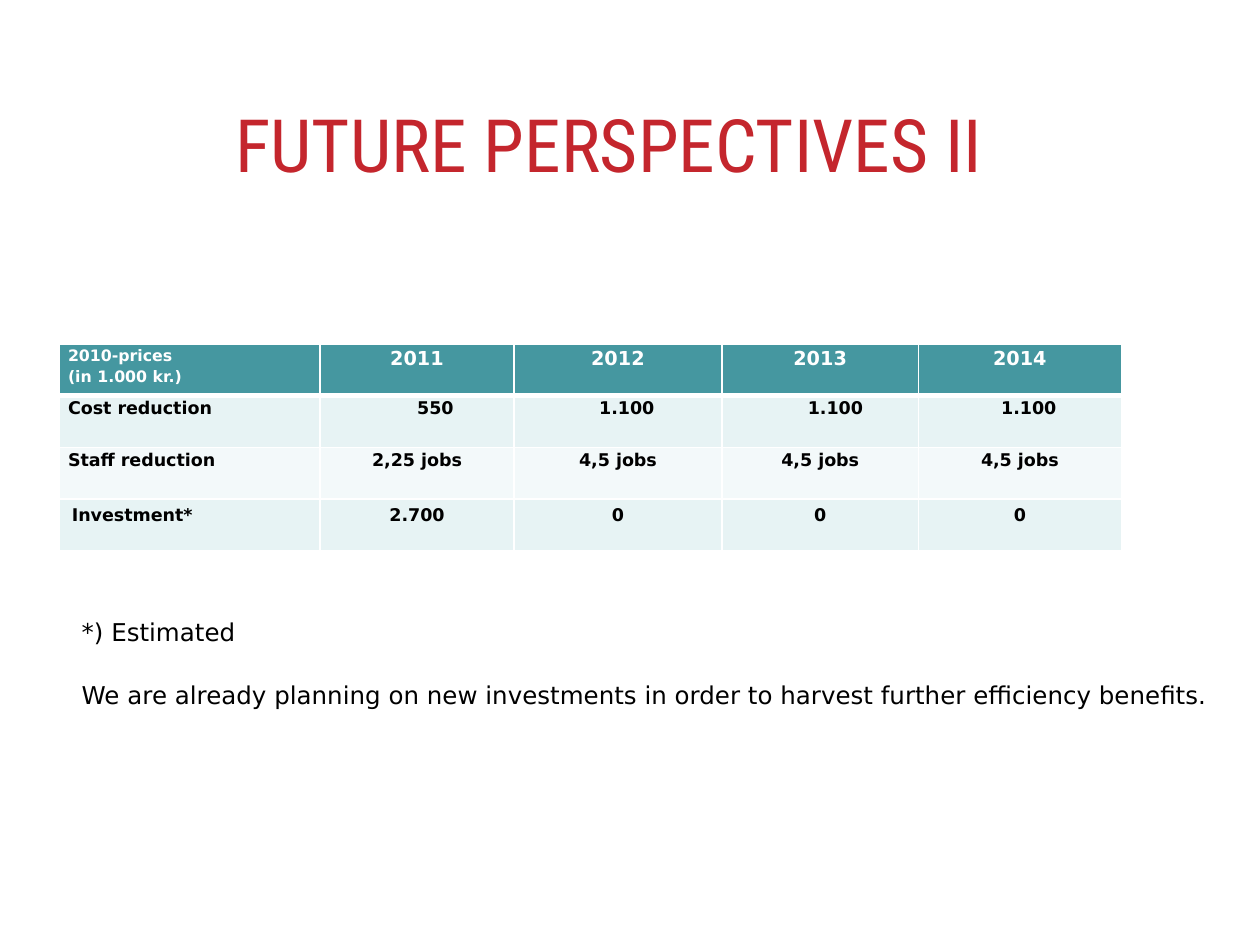
"""Builds the "Future perspectives II" slide with its forecast table."""
from lxml import etree
from pptx import Presentation, util as u
from pptx.dml.color import RGBColor
from pptx.enum import text as t
from pptx.oxml import ns

WIDTH, HEIGHT = 10, 7.5
FONT = "DejaVu Sans"
TITLE = "FUTURE PERSPECTIVES II"
NOTES = ["*) Estimated",
         "We are already planning on new investments in order to harvest further efficiency benefits."]
ROWS = [
    ["2010-prices\n(in 1.000 kr.)", "2011", "2012", "2013", "2014"],
    ["Cost reduction", "550", "1.100", "1.100", "1.100"],
    ["Staff reduction", "2,25 jobs", "4,5 jobs", "4,5 jobs", "4,5 jobs"],
    ["Investment*", "2.700", "0", "0", "0"],
]
FILLS = ["4597A0", "E7F3F4", "F3F9FA", "E7F3F4"]
COLUMNS = [2.07, 1.54, 1.65, 1.56, 1.61]
ROW_HEIGHT = 0.41
COST_SHIFTS = [0, 0.29, 0.14, 0.24, 0.14]


def color(value):
    return RGBColor.from_string(value)


def write(frame, content, size, font=FONT, ink="000000", bold=False,
          align=t.PP_ALIGN.LEFT, spacing=1.0, gap=0):
    for index, line in enumerate(content.split("\n")):
        paragraph = frame.add_paragraph() if index else frame.paragraphs[0]
        paragraph.alignment, paragraph.line_spacing = align, spacing
        paragraph.space_before = u.Pt(gap if index else 0)
        run = paragraph.add_run()
        run.text = line
        run.font.size, run.font.name, run.font.bold = u.Pt(size), font, bold
        run.font.color.rgb = color(ink)


def add_text(slide, box, content, anchor=t.MSO_ANCHOR.TOP, **style):
    frame = slide.shapes.add_textbox(*map(u.Inches, box)).text_frame
    frame.word_wrap, frame.vertical_anchor = True, anchor
    write(frame, content, **style)


def add_borders(cell, widths):
    properties = cell._tc.get_or_add_tcPr()
    for index, (side, width) in enumerate(widths.items()):
        line = etree.Element(ns.qn(f"a:ln{side}"), w=str(u.Pt(width)))
        fill = etree.SubElement(line, ns.qn("a:solidFill"))
        etree.SubElement(fill, ns.qn("a:srgbClr"), val="FFFFFF")
        properties.insert(index, line)


def add_forecast(slide, left, top):
    table = slide.shapes.add_table(
        len(ROWS), len(COLUMNS), u.Inches(left), u.Inches(top),
        u.Inches(sum(COLUMNS)), u.Inches(ROW_HEIGHT * len(ROWS))).table
    for column, width in zip(table.columns, COLUMNS):
        column.width = u.Inches(width)
    for r, values in enumerate(ROWS):
        table.rows[r].height = u.Inches(ROW_HEIGHT)
        header, last = r == 0, r == len(ROWS) - 1
        for c, value in enumerate(values):
            cell = table.cell(r, c)
            cell.fill.solid()
            cell.fill.fore_color.rgb = color(FILLS[r])
            if not last:
                shift = COST_SHIFTS[c] if r == 1 else 0
                cell.margin_left, cell.margin_right = u.Inches(0.07 + shift), u.Inches(0.07)
                cell.margin_top = cell.margin_bottom = 0
            size = (11 if c else 9) if header else 10
            write(cell.text_frame, value, size, bold=True,
                  ink="FFFFFF" if header else "000000",
                  align=t.PP_ALIGN.CENTER if c else t.PP_ALIGN.LEFT,
                  spacing=1.0 if last else 1.15)
            add_borders(cell, {"L": 1, "R": 1, "T": 3 if r == 1 else 1,
                               "B": 3 if header else 1})


def main():
    deck = Presentation()
    deck.slide_width, deck.slide_height = u.Inches(WIDTH), u.Inches(HEIGHT)
    slide = deck.slides.add_slide(deck.slide_layouts[6])
    add_text(slide, (1.77, 0.44, 7.99, 1.5), TITLE, anchor=t.MSO_ANCHOR.MIDDLE,
             size=42, font="Roboto Condensed", ink="C4262D", spacing=0.85)
    add_forecast(slide, 0.47, 2.73)
    add_text(slide, (0.55, 4.84, 9.26, 0.84), "\n".join(NOTES),
             size=14, spacing=1.05, gap=18)
    deck.save("out.pptx")


if __name__ == "__main__":
    main()
